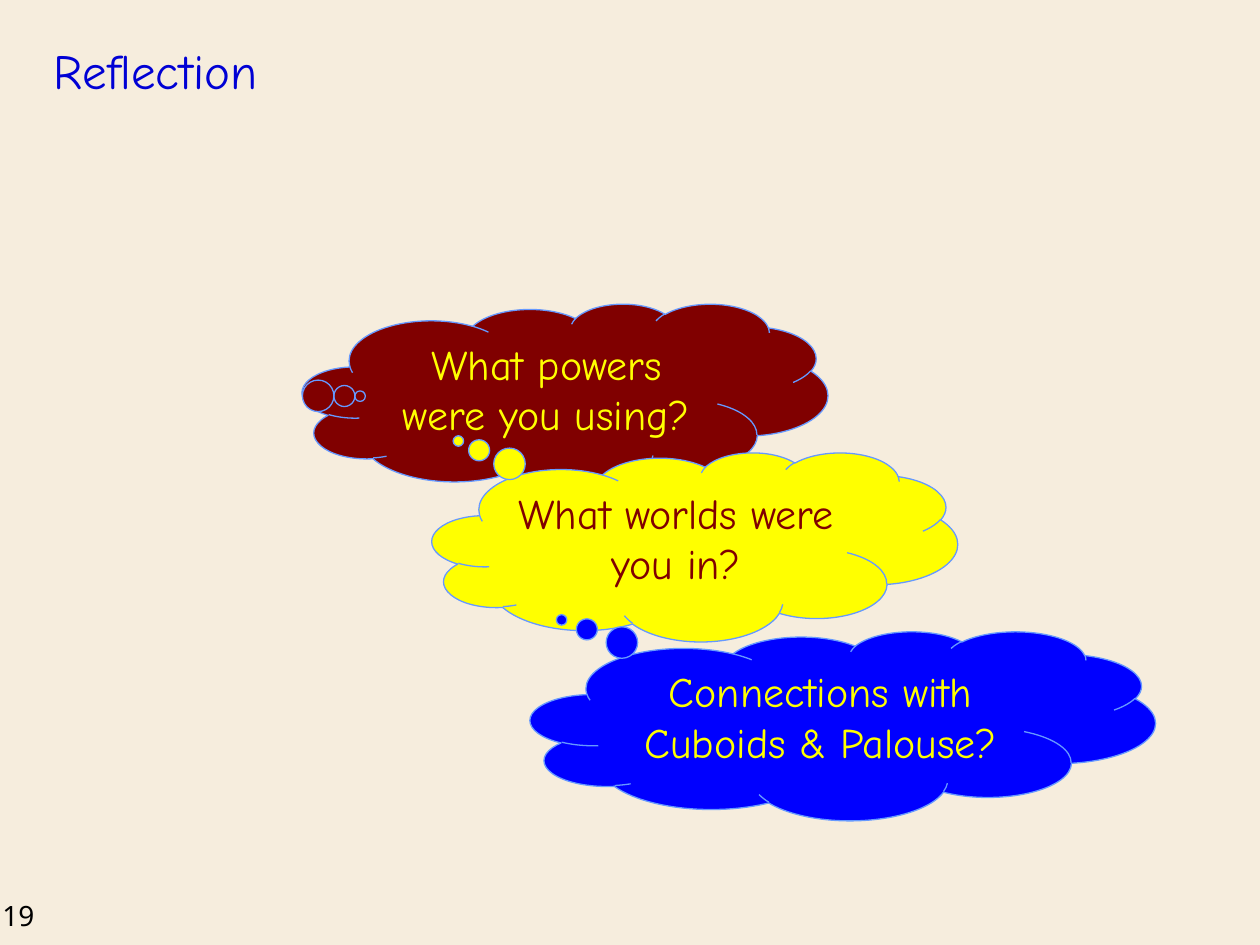
from pptx import Presentation
from pptx.dml.color import RGBColor as RGB
from pptx.enum.shapes import MSO_SHAPE as Kind
from pptx.enum.text import MSO_ANCHOR as Anchor, PP_ALIGN as Align
from pptx.util import Emu, Pt

SCALE = 9144  # EMU per px, 100 px to the inch

CREAM = RGB(0xF6, 0xED, 0xDD)
BLACK = RGB(0x00, 0x00, 0x00)
NAVY = RGB(0x00, 0x00, 0xD4)
MAROON = RGB(0x80, 0x00, 0x00)
YELLOW = RGB(0xFF, 0xFF, 0x00)
BLUE = RGB(0x00, 0x00, 0xFF)
SKY = RGB(0x66, 0x99, 0xFF)


def px(*nums):
    return [Emu(n * SCALE) for n in nums]


def write(frame, text, size=24, color=BLACK, font="Comic Neue",
          align=Align.LEFT, anchor=Anchor.TOP):
    frame.word_wrap = True
    frame.vertical_anchor = anchor
    para = frame.paragraphs[0]
    para.alignment = align
    run = para.add_run()
    run.text = text
    run.font.size = Pt(size)
    run.font.name = font
    run.font.color.rgb = color


class Deck:
    def __init__(self, wide, high):
        self.prs = Presentation()
        self.prs.slide_width, self.prs.slide_height = px(wide, high)
        self.slide = self.prs.slides.add_slide(self.prs.slide_layouts[6])
        fill = self.slide.background.fill
        fill.solid()
        fill.fore_color.rgb = CREAM

    def label(self, box, text, **style):
        shape = self.slide.shapes.add_textbox(*px(*box))
        write(shape.text_frame, text, **style)

    def cloud(self, box, text, fill, color, tail):
        shape = self.slide.shapes.add_shape(Kind.CLOUD_CALLOUT, *px(*box))
        shape.shadow.inherit = False
        shape.adjustments[0], shape.adjustments[1] = tail
        shape.fill.solid()
        shape.fill.fore_color.rgb = fill
        shape.line.color.rgb = SKY
        shape.line.width = Pt(0.75)
        write(shape.text_frame, text, color=color, align=Align.CENTER)


def main():
    deck = Deck(1000, 750)

    # Page number and title
    deck.label((-8, 708, 75, 37), "19", size=16, font="Noto Sans")
    deck.label((33, 17, 850, 67), "Reflection", size=28, color=NAVY,
               anchor=Anchor.BOTTOM)

    # Thought clouds, each later one in front
    side, above = (-0.39, -0.01), (-0.45, -0.56)
    clouds = [
        ((240, 241, 417, 150), "What powers were you using?",
         MAROON, YELLOW, side),
        ((343, 359, 417, 150), "What worlds were you in?",
         YELLOW, MAROON, above),
        ((421, 501, 496, 150), "Connections with Cuboids & Palouse?",
         BLUE, YELLOW, above),
    ]
    for cloud in clouds:
        deck.cloud(*cloud)

    deck.prs.save("out.pptx")


if __name__ == "__main__":
    main()
